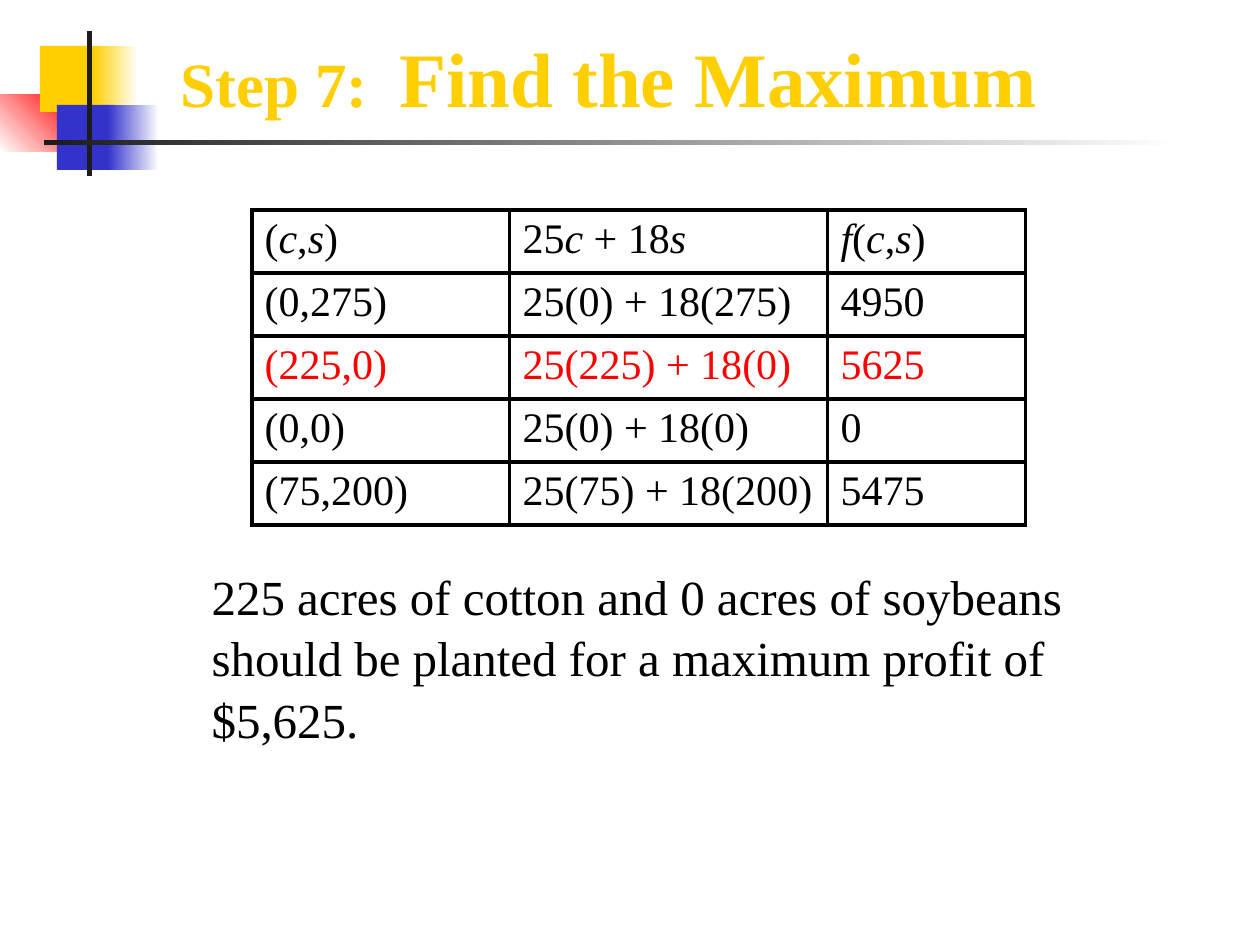
from dataclasses import dataclass

from lxml.etree import SubElement
from pptx import Presentation
from pptx.dml.color import RGBColor
from pptx.enum.shapes import MSO_SHAPE
from pptx.enum.text import MSO_ANCHOR, MSO_AUTO_SIZE, PP_ALIGN
from pptx.oxml.ns import qn
from pptx.util import Emu, Pt


@dataclass(frozen=True)
class Theme:
    """Colours, typeface and type sizes of the slide."""
    font: str = "Times New Roman"
    paper: str = "FFFFFF"
    ink: str = "000000"
    rule: str = "1C1C1C"
    gold: str = "FFCF01"
    red: str = "FF0000"
    blue: str = "3333CC"
    step_size: int = 36
    title_size: int = 44
    answer_size: int = 28
    cell_size: int = 24
    border: int = 2


THEME = Theme()
PX_PER_INCH = 126
ROWS = [
    ("(*c*,*s*)", "25*c* + 18*s*", "*f*(*c*,*s*)"),
    ("(0,275)", "25(0) + 18(275)", "4950"),
    ("(225,0)", "25(225) + 18(0)", "5625"),
    ("(0,0)", "25(0) + 18(0)", "0"),
    ("(75,200)", "25(75) + 18(200)", "5475"),
]
BEST_ROW = 2


def px(length):
    """Turn pixels into EMU."""
    return Emu(round(length * 914400 / PX_PER_INCH))


def write(para, text, size, color=THEME.ink, bold=False):
    """Add text to a paragraph, with the parts between asterisks in italics."""
    for index, part in enumerate(text.split("*")):
        if part:
            span = para.add_run()
            span.text = part
            span.font.name = THEME.font
            span.font.size = Pt(size)
            span.font.bold = bold
            span.font.italic = index % 2 == 1
            span.font.color.rgb = RGBColor.from_string(color)


def place(shape, box):
    """Move a shape to a box given in pixels."""
    shape.left, shape.top, shape.width, shape.height = map(px, box)


def add_block(page, box, start, end=None, angle=0):
    """Add a borderless rectangle, plain or fading from start to end."""
    block = page.shapes.add_shape(MSO_SHAPE.RECTANGLE, *map(px, box))
    block.shadow.inherit = False
    block.line.fill.background()
    if end is None:
        block.fill.solid()
        block.fill.fore_color.rgb = RGBColor.from_string(start)
        return
    block.fill.gradient()
    block.fill.gradient_angle = angle
    for stop, color in zip(block.fill.gradient_stops, (start, end)):
        stop.color.rgb = RGBColor.from_string(color)


def add_ornament(page, box):
    """Add the overlapping squares and the crossed rules."""
    left, top, width, height = box
    blocks = [
        ((0, 63, 77, 58), THEME.paper, THEME.red, 45),
        ((40, 15, 60, 66), THEME.gold),
        ((93, 15, 45, 66), THEME.gold, THEME.paper),
        ((57, 74, 58, 65), THEME.blue),
        ((108, 74, 51, 65), THEME.blue, THEME.paper),
        ((87, 0, 5, height), THEME.rule),
        ((44, 109, width - 44, 5), THEME.rule, THEME.paper),
    ]
    for (x, y, wide, high), *colors in blocks:
        add_block(page, (left + x, top + y, wide, high), *colors)


def prepare_text(shape, box, spacing):
    """Place a placeholder and return its first paragraph, left aligned."""
    place(shape, box)
    frame = shape.text_frame
    frame.word_wrap = True
    frame.auto_size = MSO_AUTO_SIZE.NONE
    frame.vertical_anchor = MSO_ANCHOR.TOP
    para = frame.paragraphs[0]
    para.alignment = PP_ALIGN.LEFT
    para.line_spacing = spacing
    para.space_before = Pt(0)
    return para


def add_title(page, box):
    """Fill the title placeholder."""
    para = prepare_text(page.shapes.title, box, 0.8)
    write(para, "Step 7:  ", THEME.step_size, color=THEME.gold, bold=True)
    write(para, "Find the Maximum", THEME.title_size, color=THEME.gold, bold=True)


def add_answer(page, box):
    """Fill the body placeholder with the conclusion, without a bullet."""
    para = prepare_text(page.placeholders[1], box, 1.05)
    settings = para._p.get_or_add_pPr()
    settings.set("marL", "0")
    settings.set("indent", "0")
    SubElement(settings, qn("a:buNone"))
    write(para, "225 acres of cotton and 0 acres of soybeans should be planted "
                "for a maximum profit of $5,625.", THEME.answer_size)


def outline(cell):
    """Draw the four borders of a cell and leave it unfilled."""
    settings = cell._tc.get_or_add_tcPr()
    for side in ("lnL", "lnR", "lnT", "lnB"):
        line = SubElement(settings, qn(f"a:{side}"), w=str(Pt(THEME.border)))
        fill = SubElement(line, qn("a:solidFill"))
        SubElement(fill, qn("a:srgbClr"), val=THEME.ink)
    cell.fill.background()


def add_values(page, box):
    """Add the table of corner points and profits."""
    table = page.shapes.add_table(len(ROWS), len(ROWS[0]), *map(px, box)).table
    table.first_row = table.horz_banding = False
    width, height = box[2:]
    for column, wide in zip(table.columns, (258, 318, width - 258 - 318)):
        column.width = px(wide)
    for row, line in enumerate(ROWS):
        table.rows[row].height = px(height / len(ROWS))
        color = THEME.red if row == BEST_ROW else THEME.ink
        for column, text in enumerate(line):
            cell = table.cell(row, column)
            outline(cell)
            write(cell.text_frame.paragraphs[0], text, THEME.cell_size, color=color)


def main():
    """Build and save the slide."""
    deck = Presentation()
    deck.slide_width, deck.slide_height = px(1260), px(945)
    page = deck.slides.add_slide(deck.slide_layouts[1])
    add_ornament(page, (0, 31, 1178, 145))
    add_title(page, (168, 42, 1071, 87))
    add_answer(page, (199, 557, 998, 189))
    add_values(page, (252, 210, 774, 315))
    deck.save("out.pptx")


if __name__ == "__main__":
    main()
